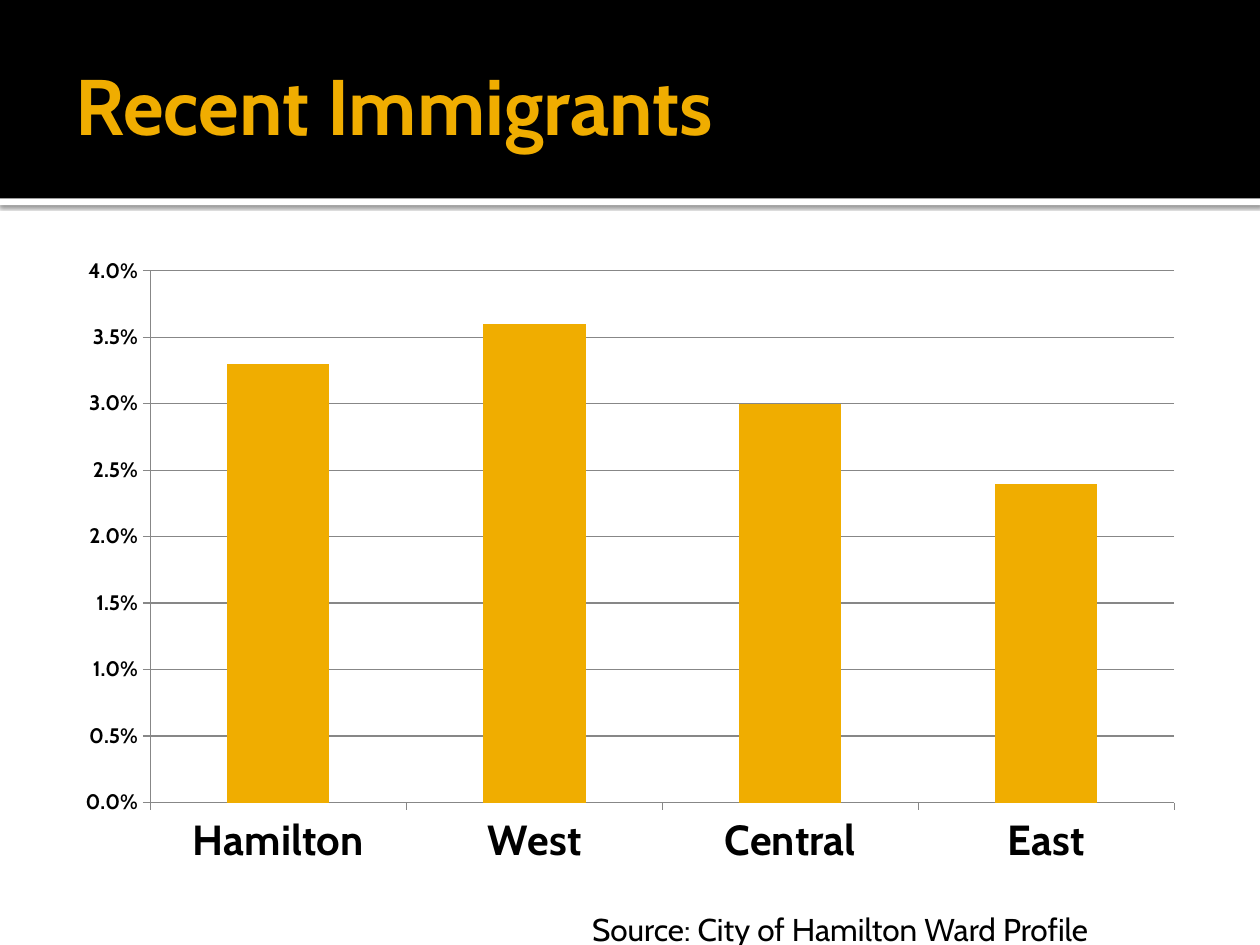
from lxml import etree
from pptx import Presentation
from pptx import util as u
from pptx.chart.data import CategoryChartData
from pptx.dml.color import RGBColor
from pptx.enum import chart as charts, shapes, text
from pptx.oxml.ns import qn

BLACK, WHITE, GOLD, GREY = "000000", "FFFFFF", "F0AD00", "878787"
WIDTH, HEIGHT = 10, 7.5


def color(hex_value):
    return RGBColor.from_string(hex_value)


def style_font(font, size, hex_value=BLACK, bold=False):
    font.name = "Cabin"
    font.size = u.Pt(size)
    font.bold = bold
    font.color.rgb = color(hex_value)


def write(frame, content, size, hex_value=BLACK, bold=False,
          anchor=text.MSO_ANCHOR.TOP, left_inset=0.1, right_inset=0.1):
    """Put one formatted line of text into a text frame."""
    frame.word_wrap = True
    frame.vertical_anchor = anchor
    frame.margin_left, frame.margin_right = u.Inches(left_inset), u.Inches(right_inset)
    frame.margin_top = frame.margin_bottom = u.Inches(0.05)
    line = frame.paragraphs[0]
    line.alignment = text.PP_ALIGN.LEFT
    run = line.add_run()
    run.text = content
    style_font(run.font, size, hex_value, bold)


class SlideBuilder:
    """Holds the current slide; boxes are shares of its width and height."""

    def __init__(self, deck):
        self.slide = deck.slides.add_slide(deck.slide_layouts[5])
        self.shapes = self.slide.shapes

    def box(self, left, top, width, height):
        return (u.Inches(left * WIDTH), u.Inches(top * HEIGHT),
                u.Inches(width * WIDTH), u.Inches(height * HEIGHT))

    def band(self, share, fill, shadow=False):
        band = self.shapes.add_shape(shapes.MSO_SHAPE.RECTANGLE, *self.box(*share))
        band.shadow.inherit = False
        band.fill.solid()
        band.fill.fore_color.rgb = color(fill)
        band.line.fill.background()
        if shadow:
            effects = band._element.spPr.find(qn("a:effectLst"))
            outer = etree.SubElement(effects, qn("a:outerShdw"), blurRad="31750",
                                     dist="10160", dir="5400000", rotWithShape="0")
            tint = etree.SubElement(outer, qn("a:srgbClr"), val=BLACK)
            etree.SubElement(tint, qn("a:alpha"), val="60000")

    def title(self, share, content):
        title = self.shapes.title
        title.left, title.top, title.width, title.height = self.box(*share)
        write(title.text_frame, content, 45, GOLD, bold=True,
              anchor=text.MSO_ANCHOR.MIDDLE, right_inset=0.05)
        # Bring the title in front of the header band
        self.shapes._spTree.append(title._element)

    def note(self, share, content):
        note = self.shapes.add_textbox(*self.box(*share))
        write(note.text_frame, content, 18)
        note.text_frame.auto_size = text.MSO_AUTO_SIZE.SHAPE_TO_FIT_TEXT

    def columns(self, share, values, number_format):
        data = CategoryChartData(number_format=number_format)
        data.categories = list(values)
        data.add_series("Series 1", list(values.values()))
        chart = self.shapes.add_chart(charts.XL_CHART_TYPE.COLUMN_CLUSTERED,
                                      *self.box(*share), data).chart
        chart.has_legend = chart.has_title = False
        style_font(chart.font, 10)

        # Columns
        plot = chart.plots[0]
        plot.gap_width = 150
        plot.vary_by_categories = False
        fill = plot.series[0].format.fill
        fill.solid()
        fill.fore_color.rgb = color(GOLD)

        # Axes
        for axis, size in ((chart.category_axis, 24), (chart.value_axis, 12)):
            axis.major_tick_mark = charts.XL_TICK_MARK.OUTSIDE
            axis.minor_tick_mark = charts.XL_TICK_MARK.NONE
            axis.format.line.color.rgb = color(GREY)
            style_font(axis.tick_labels.font, size, bold=True)
        scale = chart.value_axis
        scale.minimum_scale, scale.maximum_scale, scale.major_unit = 0, 0.04, 0.005
        scale.tick_labels.number_format = number_format
        scale.tick_labels.number_format_is_linked = False
        scale.has_major_gridlines = True
        scale.major_gridlines.format.line.color.rgb = color(GREY)


def main():
    deck = Presentation()
    deck.slide_width, deck.slide_height = u.Inches(WIDTH), u.Inches(HEIGHT)
    page = SlideBuilder(deck)

    # Header
    header = 0.21
    page.band((0, header, 1, 0.007), WHITE, shadow=True)
    page.band((0, 0, 1, header), BLACK)
    page.title((0.05, 0.02, 0.9, 0.18), "Recent Immigrants")

    # Share of recent immigrants by area
    immigrants = {"Hamilton": 0.033, "West": 0.036, "Central": 0.03, "East": 0.024}
    page.columns((0.05, 0.26, 0.9, 0.67), immigrants, "0.0%")

    # Source
    page.note((0.46, 0.956, 0.475, 0.053), "Source: City of Hamilton Ward Profile")

    deck.save("out.pptx")


if __name__ == "__main__":
    main()
